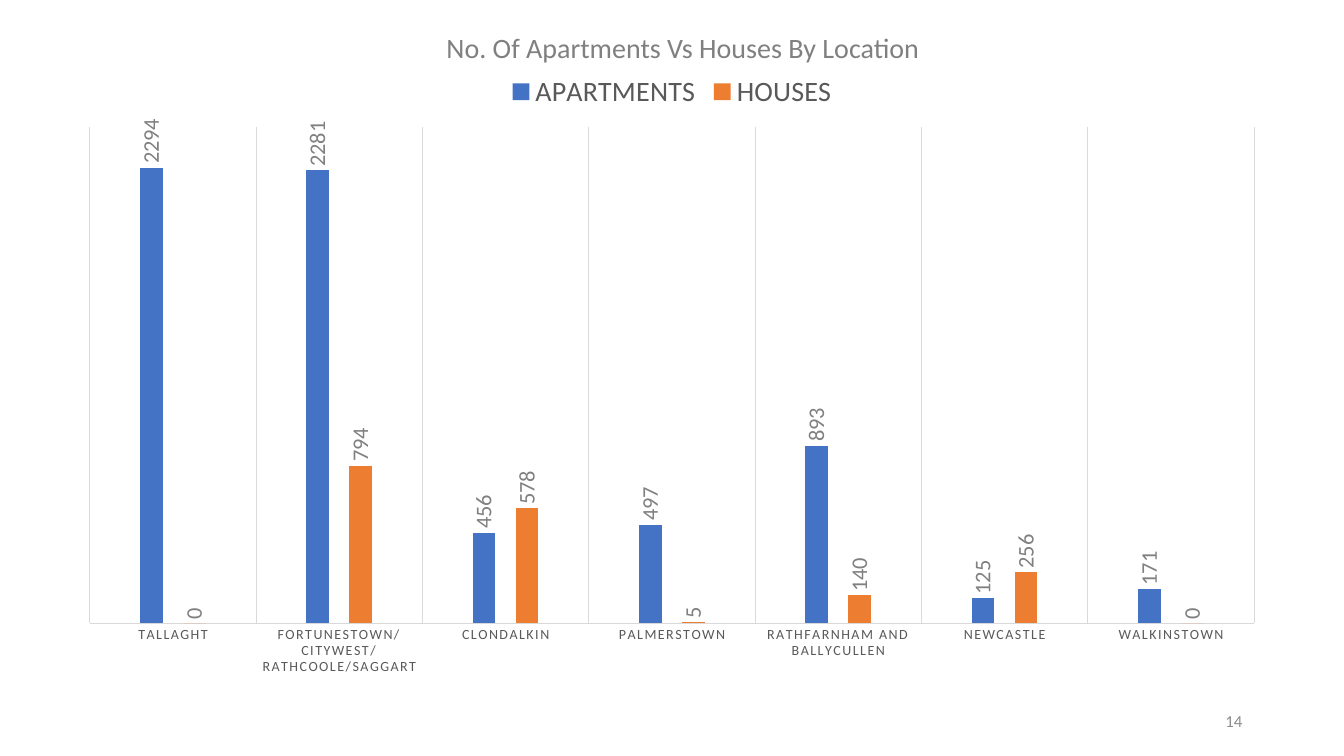
from dataclasses import dataclass

from lxml.etree import SubElement
from pptx import Presentation
from pptx.chart.data import CategoryChartData
from pptx.dml.color import RGBColor
from pptx.enum.chart import XL_CHART_TYPE, XL_LABEL_POSITION, XL_LEGEND_POSITION, XL_TICK_MARK
from pptx.enum.text import MSO_ANCHOR, MSO_AUTO_SIZE, PP_ALIGN
from pptx.oxml.ns import qn
from pptx.util import Inches, Pt

SLIDE_WIDTH, SLIDE_HEIGHT = 13.33, 7.5


@dataclass(frozen=True)
class Theme:
    font: str = "Calibri"
    apartments: str = "4472C4"
    houses: str = "ED7D31"
    heading: str = "808080"
    axis_text: str = "595959"
    grid: str = "D9D9D9"
    page_number: str = "8C8C8C"
    heading_size: int = 20
    value_size: int = 16
    page_number_size: int = 12
    category_size: int = 10


THEME = Theme()

LOCATIONS = [
    "TALLAGHT",
    "FORTUNESTOWN/CITYWEST/RATHCOOLE/SAGGART",
    "CLONDALKIN",
    "PALMERSTOWN",
    "RATHFARNHAM AND BALLYCULLEN",
    "NEWCASTLE",
    "WALKINSTOWN",
]
HOMES = {
    "APARTMENTS": ([2294, 2281, 456, 497, 893, 125, 171], THEME.apartments),
    "HOUSES": ([0, 794, 578, 5, 140, 256, 0], THEME.houses),
}


def style_font(font, size, color):
    font.name = THEME.font
    font.size = Pt(size)
    font.color.rgb = RGBColor.from_string(color)


def add_line_of_text(slide, box, text, size, color, align=PP_ALIGN.LEFT,
                     anchor=MSO_ANCHOR.TOP, fit=MSO_AUTO_SIZE.NONE):
    frame = slide.shapes.add_textbox(*map(Inches, box)).text_frame
    frame.word_wrap = True
    frame.auto_size = fit
    frame.vertical_anchor = anchor
    line = frame.paragraphs[0]
    line.alignment = align
    run = line.add_run()
    run.text = text
    style_font(run.font, size, color)


def place_plot(chart, **shares):
    """Fix the inner plot area, in shares of the chart's size."""
    plot_area = chart._chartSpace.chart.plotArea
    layout = plot_area.find(qn("c:layout"))
    if layout is None:
        layout = plot_area.makeelement(qn("c:layout"))
        plot_area.insert(0, layout)
    manual = SubElement(layout, qn("c:manualLayout"))
    settings = {"layoutTarget": "inner", "xMode": "edge", "yMode": "edge", **shares}
    for tag, value in settings.items():
        SubElement(manual, qn(f"c:{tag}")).set("val", str(value))


def style_axes(chart):
    locations = chart.category_axis
    locations.major_tick_mark = locations.minor_tick_mark = XL_TICK_MARK.NONE
    locations.has_major_gridlines = True
    for line in (locations.format.line, locations.major_gridlines.format.line):
        line.color.rgb = RGBColor.from_string(THEME.grid)
        line.width = Pt(0.75)
    style_font(locations.tick_labels.font, THEME.category_size, THEME.axis_text)
    for letters in locations._element.iter(qn("a:defRPr")):
        letters.set("spc", "120")

    counts = chart.value_axis
    counts.minimum_scale, counts.maximum_scale = 0, 2500
    counts.has_major_gridlines = False
    counts.visible = False


def style_series(series, color):
    series.smooth = False if hasattr(series, "smooth") else None
    series.invert_if_negative = False
    series.format.fill.solid()
    series.format.fill.fore_color.rgb = RGBColor.from_string(color)
    labels = series.data_labels
    labels.show_value = True
    labels.position = XL_LABEL_POSITION.OUTSIDE_END
    style_font(labels.font, THEME.value_size, THEME.heading)
    for body in labels._element.iter(qn("a:bodyPr")):
        body.set("rot", "-5400000")
        body.set("vert", "horz")


def add_homes_chart(slide, box):
    homes = CategoryChartData()
    homes.categories = LOCATIONS
    for name, (counts, _) in HOMES.items():
        homes.add_series(name, counts)
    chart = slide.shapes.add_chart(
        XL_CHART_TYPE.COLUMN_CLUSTERED, *map(Inches, box), homes).chart
    style_font(chart.font, THEME.category_size, "000000")
    chart.has_title = False
    chart.has_legend = True
    chart.legend.position = XL_LEGEND_POSITION.TOP
    chart.legend.include_in_layout = False
    style_font(chart.legend.font, THEME.heading_size, THEME.axis_text)

    columns = chart.plots[0]
    columns.vary_by_categories = False
    columns.gap_width = 444
    columns.overlap = -90
    for series in columns.series:
        style_series(series, HOMES[series.name][1])
    style_axes(chart)
    place_plot(chart, x=0.02, y=0.105, w=0.96, h=0.794)


def add_chart_slide(deck):
    slide = deck.slides.add_slide(deck.slide_layouts[6])
    add_line_of_text(slide, (9.42, 6.95, 3, 0.4), "14",
                     THEME.page_number_size, THEME.page_number,
                     align=PP_ALIGN.RIGHT, anchor=MSO_ANCHOR.MIDDLE)
    add_homes_chart(slide, (0.65, 0.61, 12.03, 6.2))
    add_line_of_text(slide, (4.33, 0.25, 5.66, 0.44),
                     "No. Of Apartments Vs Houses By Location",
                     THEME.heading_size, THEME.heading,
                     fit=MSO_AUTO_SIZE.SHAPE_TO_FIT_TEXT)


def main():
    deck = Presentation()
    deck.slide_width = Inches(SLIDE_WIDTH)
    deck.slide_height = Inches(SLIDE_HEIGHT)
    add_chart_slide(deck)
    deck.save("out.pptx")


if __name__ == "__main__":
    main()
